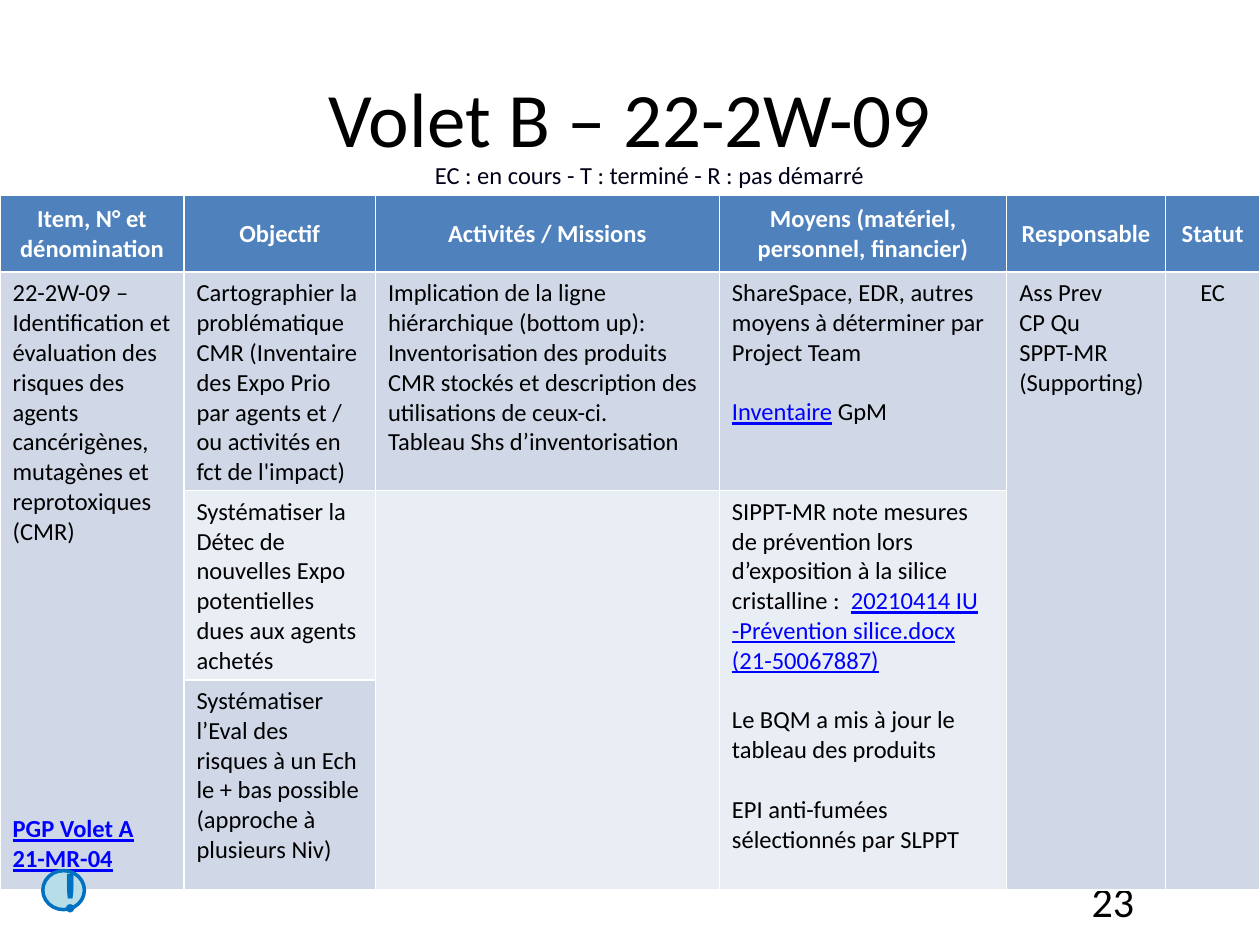
from pptx import Presentation
from pptx.dml.color import RGBColor
from pptx.enum.shapes import MSO_SHAPE
from pptx.enum.text import MSO_ANCHOR, PP_ALIGN
from pptx.util import Inches, Pt

BLACK, WHITE, LINK = "000000", "FFFFFF", "0000FF"
HEADER, BAND_DARK, BAND_LIGHT = "4F81BD", "D0D8E8", "E9EDF4"
LINE_GAP = 17  # one line of 14 pt text


def rgb(value):
    return RGBColor.from_string(value)


def write(frame, paragraphs, align=PP_ALIGN.LEFT, size=14, color=BLACK, bold=False):
    """Each paragraph is (space before, [(text, font overrides), ...])."""
    for index, (gap, runs) in enumerate(paragraphs):
        paragraph = frame.paragraphs[0] if index == 0 else frame.add_paragraph()
        paragraph.alignment = align
        if gap:
            paragraph.space_before = Pt(gap)
        for text, overrides in runs:
            run = paragraph.add_run()
            run.text = text
            style = {"name": "Calibri", "size": Pt(size), "bold": bold,
                     "color": color, **overrides}
            run.font.color.rgb = rgb(style.pop("color"))
            for attribute, value in style.items():
                setattr(run.font, attribute, value)


prs = Presentation()
prs.slide_width, prs.slide_height = Inches(10), Inches(7.5)
slide = prs.slides.add_slide(prs.slide_layouts[6])

# Title, status legend and page number
captions = [
    ("Volet B – 22-2W-09", (0.5, 0.3, 9, 1.25), 44, BLACK,
     PP_ALIGN.CENTER, MSO_ANCHOR.MIDDLE),
    ("EC : en cours - T : terminé - R : pas démarré", (2.4, 1.17, 5.51, 0.38), 14,
     "000018", PP_ALIGN.CENTER, MSO_ANCHOR.BOTTOM),
    ("23", (7.17, 6.95, 1.93, 0.4), 24, BLACK, PP_ALIGN.RIGHT, MSO_ANCHOR.MIDDLE),
]
for text, box, size, color, align, anchor in captions:
    caption = slide.shapes.add_textbox(*map(Inches, box)).text_frame
    caption.word_wrap = True
    caption.vertical_anchor = anchor
    write(caption, [(0, [(text, {})])], align, size, color)

# Action plan grid
col_widths = [1.46, 1.52, 2.73, 2.28, 1.26, 0.75]
row_heights = [0.61, 1.63, 1.12, 1.67]
plan = slide.shapes.add_table(len(row_heights), len(col_widths), Inches(0), Inches(1.55),
                              Inches(10), Inches(5.52)).table
for column, width in zip(plan.columns, col_widths):
    column.width = Inches(width)
for row, height in zip(plan.rows, row_heights):
    row.height = Inches(height)

for r, band in enumerate([HEADER, BAND_DARK, BAND_LIGHT, BAND_DARK]):
    for c in range(len(col_widths)):
        cell = plan.cell(r, c)
        cell.fill.solid()
        cell.fill.fore_color.rgb = rgb(band)

# Cells that span several rows: first row, last row, column
for first, last, c in [(1, 3, 0), (1, 3, 4), (1, 3, 5), (2, 3, 2), (2, 3, 3)]:
    plan.cell(first, c).merge(plan.cell(last, c))

# Header row
headings = ["Item, N° et dénomination", "Objectif", "Activités / Missions",
            "Moyens (matériel, personnel, financier)", "Responsable", "Statut"]
for c, heading in enumerate(headings):
    cell = plan.cell(0, c)
    cell.vertical_anchor = MSO_ANCHOR.MIDDLE
    write(cell.text_frame, [(0, [(heading, {})])], PP_ALIGN.CENTER, color=WHITE, bold=True)

# Body cells
link = {"color": LINK, "underline": True}
body = {
    (1, 0): [
        (0, [("22-2W-09 – Identification et évaluation des risques des agents "
              "cancérigènes, mutagènes et reprotoxiques (CMR)", {})]),
        (9 * LINE_GAP, [("PGP Volet A 21-MR-04", {**link, "bold": True})]),
    ],
    (1, 1): [(0, [("Cartographier la problématique CMR (Inventaire des Expo Prio par "
                   "agents et / ou activités en fct de l'impact)", {})])],
    (1, 2): [
        (0, [("Implication de la ligne hiérarchique (bottom up):", {})]),
        (0, [("Inventorisation des produits CMR stockés et description des "
              "utilisations de ceux-ci.", {})]),
        (0, [("Tableau Shs d’inventorisation", {})]),
    ],
    (1, 3): [
        (0, [("ShareSpace, EDR, autres moyens à déterminer par Project Team", {})]),
        (LINE_GAP, [("Inventaire", link), (" GpM", {})]),
    ],
    (1, 4): [(0, [(name, {})]) for name in ("Ass Prev", "CP Qu", "SPPT-MR (Supporting)")],
    (1, 5): [(0, [("EC", {})])],
    (2, 1): [(0, [("Systématiser la Détec de nouvelles Expo potentielles dues aux "
                   "agents achetés", {})])],
    (2, 3): [
        (0, [("SIPPT-MR note mesures de prévention lors d’exposition à la silice "
              "cristalline :  ", {}),
             ("20210414 IU -Prévention silice.docx (21-50067887)", link)]),
        (LINE_GAP, [("Le BQM a mis à jour le tableau des produits", {})]),
        (LINE_GAP, [("EPI anti-fumées sélectionnés par SLPPT", {})]),
    ],
    (3, 1): [(0, [("Systématiser l’Eval des risques à un Ech le + bas possible "
                   "(approche à plusieurs Niv)", {})])],
}
for (r, c), paragraphs in body.items():
    align = PP_ALIGN.CENTER if c == 5 else PP_ALIGN.LEFT
    write(plan.cell(r, c).text_frame, paragraphs, align)

# Attention marker
marker = slide.shapes.add_shape(MSO_SHAPE.FLOWCHART_CONNECTOR, Inches(0.34), Inches(6.91),
                                Inches(0.33), Inches(0.31))
marker.shadow.inherit = False
marker.fill.solid()
marker.fill.fore_color.rgb = rgb("B7DEE8")
marker.line.color.rgb = rgb("0070C0")
marker.line.width = Pt(2)
marker.text_frame.vertical_anchor = MSO_ANCHOR.MIDDLE
write(marker.text_frame, [(0, [("!", {})])], PP_ALIGN.CENTER, 32, "0070C0", True)

prs.save("out.pptx")
